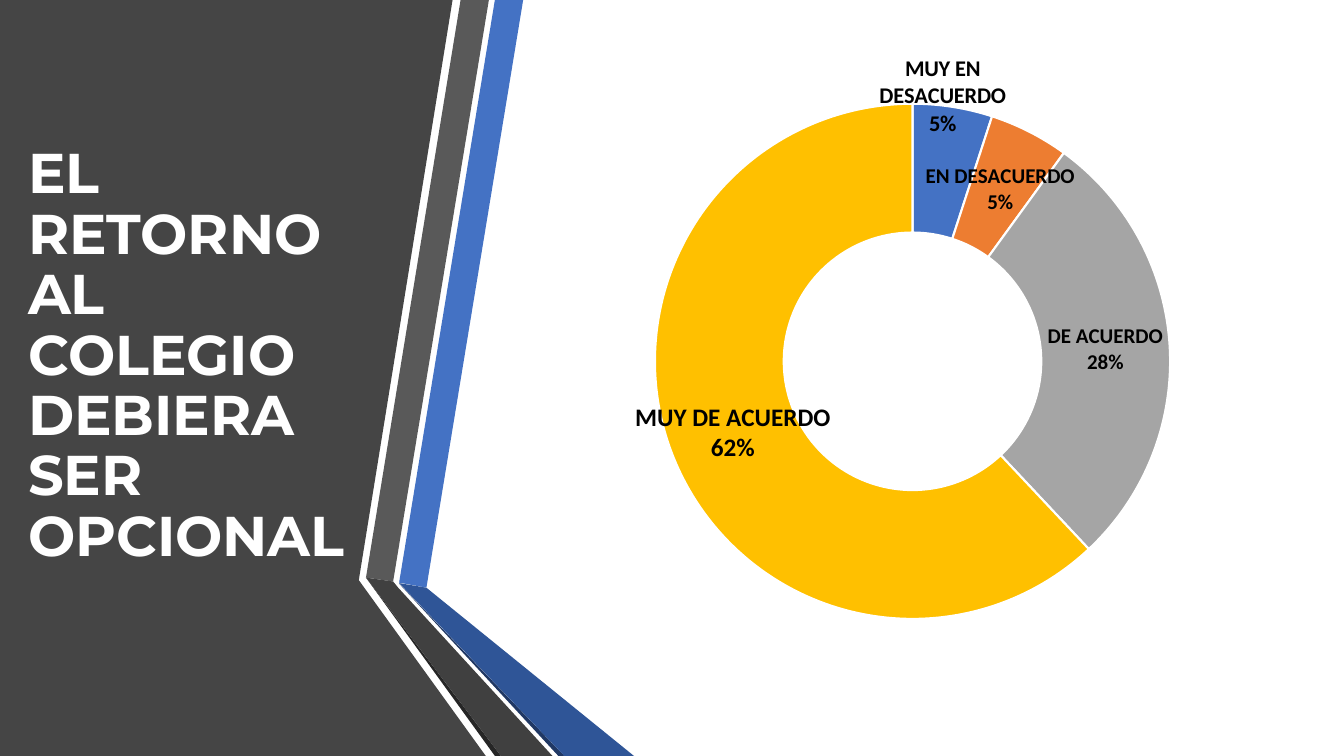
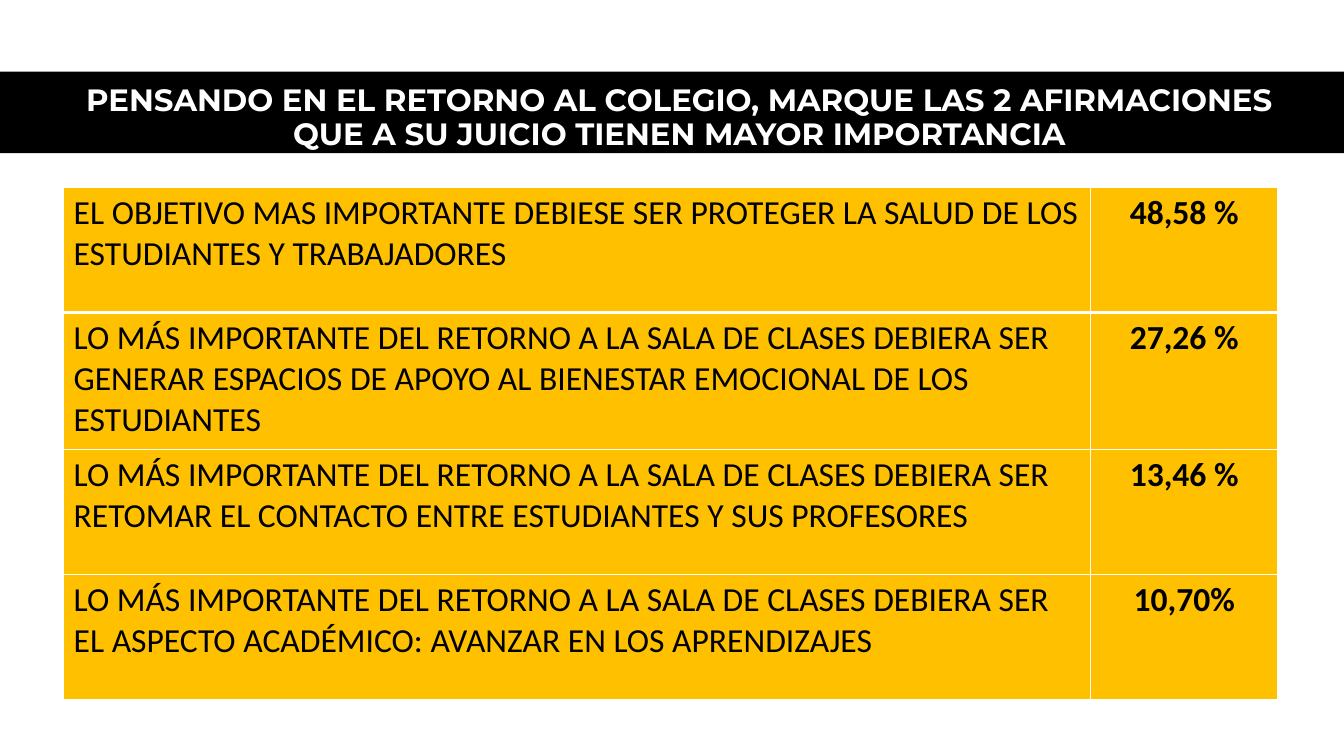
from lxml import etree
from pptx import Presentation
from pptx.chart.data import CategoryChartData
from pptx.dml.color import RGBColor
from pptx.enum import chart as kinds, shapes, text
from pptx.oxml import ns
from pptx.util import Pt

WHITE, BLACK, GOLD, BLUE = "FFFFFF", "000000", "FFC000", "4472C4"
HEAD, BODY = "Montserrat", "Calibri"

BANDS = [
    ("454545", [(0, 0), (323.3, 0), (256.3, 414.4), (347, 540), (0, 540)]),
    (BLUE, [(285.1, 416.2), (304.6, 419.8), (373.7, 0), (353.5, 0)]),
    ("595959", [(349.2, 0), (329, 0), (261.4, 412.6), (280.8, 415.4)]),
    ("262626", [(261.4, 412.6), (353.5, 540), (357.8, 540)]),
    ("203864", [(285.1, 416.9), (398.9, 540), (403.2, 540)]),
    ("2F5597", [(285.1, 416.5), (403.2, 540), (452.9, 540), (304.6, 419.8)]),
    ("404040", [(394.6, 540), (284.4, 419.8), (280.8, 415.4), (261.4, 412.6), (357.8, 540)]),
]
VIEW = "EL RETORNO AL COLEGIO DEBIERA SER OPCIONAL"
VOTES = [
    ("MUY EN DESACUERDO", 5, BLUE, 16),
    ("EN DESACUERDO", 5, "ED7D31", 15),
    ("DE ACUERDO", 28, "A5A5A5", 15),
    ("MUY DE ACUERDO", 62, GOLD, 18),
]
RING = {"x": 0.161, "y": 0.089, "w": 0.687, "h": 0.877}
SHIFT = {"x": 0, "y": -0.126}

ASK = ("PENSANDO EN EL RETORNO AL COLEGIO, MARQUE LAS 2 AFIRMACIONES "
       "QUE A SU JUICIO TIENEN MAYOR IMPORTANCIA")
LEAD = "LO MÁS IMPORTANTE DEL RETORNO A LA SALA DE CLASES DEBIERA SER "
CLAIMS = [
    ("EL OBJETIVO MAS IMPORTANTE DEBIESE SER PROTEGER LA SALUD DE LOS "
     "ESTUDIANTES Y TRABAJADORES", "48,58 %"),
    (LEAD + "GENERAR ESPACIOS DE APOYO AL BIENESTAR EMOCIONAL DE LOS ESTUDIANTES", "27,26 %"),
    (LEAD + "RETOMAR EL CONTACTO ENTRE ESTUDIANTES Y SUS PROFESORES", "13,46 %"),
    (LEAD + "EL ASPECTO ACADÉMICO: AVANZAR EN LOS APRENDIZAJES", "10,70%"),
]
COLS, ROWS = (733.5, 134), (89.3, 97.9, 89.3, 89.3)


def rgb(tone):
    return RGBColor.from_string(tone)


def style(font, size, tone=BLACK, face=BODY, bold=True):
    font.size, font.name, font.bold = Pt(size), face, bold
    font.color.rgb = rgb(tone)


def paint(shape, tone):
    shape.shadow.inherit = False
    shape.fill.solid()
    shape.fill.fore_color.rgb = rgb(tone)
    shape.line.fill.background()


def title(slide, words, box, size, align):
    frame = slide.shapes.add_textbox(*map(Pt, box)).text_frame
    frame.word_wrap = True
    frame.vertical_anchor = text.MSO_ANCHOR.MIDDLE
    frame.text = words
    para = frame.paragraphs[0]
    para.alignment, para.line_spacing = align, 0.9
    style(para.runs[0].font, size, WHITE, HEAD)


def layout(place, inner=False):
    node = etree.Element(ns.qn("c:layout"))
    man = etree.SubElement(node, ns.qn("c:manualLayout"))
    parts = list(place.items())
    if inner:
        parts = [("layoutTarget", "inner"), ("xMode", "edge"), ("yMode", "edge")] + parts
    for tag, val in parts:
        etree.SubElement(man, ns.qn("c:" + tag)).set("val", str(val))
    return node


def donut(slide):
    data = CategoryChartData()
    data.categories = [vote[0] for vote in VOTES]
    data.add_series("Series 1", [vote[1] for vote in VOTES])
    box = map(Pt, (381.6, 36.7, 535.7, 419.8))
    chart = slide.shapes.add_chart(kinds.XL_CHART_TYPE.DOUGHNUT, *box, data).chart
    chart.has_legend = chart.has_title = False
    style(chart.font, 10, bold=False)
    plot = chart.plots[0]
    plot.vary_by_categories = True
    series = plot.series[0]
    style(series.data_labels.font, 15)
    for i, (_, _, tone, size) in enumerate(VOTES):
        point = series.points[i]
        point.format.fill.solid()
        point.format.fill.fore_color.rgb = rgb(tone)
        point.format.line.color.rgb = rgb(WHITE)
        point.format.line.width = Pt(1.5)
        style(point.data_label.font, size)
    root = series.data_labels._element
    for tag, val in (("showVal", 0), ("showCatName", 1), ("showPercent", 1)):
        for node in root.iter(ns.qn("c:" + tag)):
            node.set("val", str(val))
    for node in list(root.iter(ns.qn("c:showBubbleSize"))):
        split = etree.Element(ns.qn("c:separator"))
        split.text = "\n"
        node.addnext(split)
    root.find(ns.qn("c:dLbl")).insert(1, layout(SHIFT))
    area = plot._element.getparent()
    for old in area.findall(ns.qn("c:layout")):
        area.remove(old)
    area.insert(0, layout(RING, True))


def border(cell, widths):
    props = cell._tc.get_or_add_tcPr()
    for i, (side, width) in enumerate(zip("LRTB", widths)):
        line = etree.Element(ns.qn("a:ln" + side), w=str(Pt(width)))
        fill = etree.SubElement(line, ns.qn("a:solidFill"))
        etree.SubElement(fill, ns.qn("a:srgbClr"), val=WHITE)
        props.insert(i, line)


def grid(slide):
    box = map(Pt, (45.4, 133.9, sum(COLS), sum(ROWS)))
    table = slide.shapes.add_table(len(ROWS), len(COLS), *box).table
    table.first_row = table.horz_banding = False
    for col, width in zip(table.columns, COLS):
        col.width = Pt(width)
    for r, (row, tall, claim) in enumerate(zip(table.rows, ROWS, CLAIMS)):
        row.height = Pt(tall)
        for c, (cell, words) in enumerate(zip(row.cells, claim)):
            cell.text = words
            cell.fill.solid()
            cell.fill.fore_color.rgb = rgb(GOLD)
            para = cell.text_frame.paragraphs[0]
            para.alignment = text.PP_ALIGN.CENTER if c else text.PP_ALIGN.LEFT
            style(para.runs[0].font, 24, bold=c == 1)
            border(cell, (1, 1, 3 if r == 1 else 1, 3 if r == 0 else 1))


def main():
    """Build the two survey slides."""
    deck = Presentation()
    deck.slide_width, deck.slide_height = Pt(960), Pt(540)
    first, second = [deck.slides.add_slide(deck.slide_layouts[6]) for _ in range(2)]

    for tone, dots in BANDS:
        start, *rest = [(Pt(x), Pt(y)) for x, y in dots]
        pen = first.shapes.build_freeform(*start)
        pen.add_line_segments(rest, close=True)
        paint(pen.convert_to_shape(), tone)
    title(first, VIEW, (13, 54, 247.7, 401.8), 40, text.PP_ALIGN.LEFT)
    donut(first)

    bar = map(Pt, (0, 51.1, 960, 58.3))
    paint(second.shapes.add_shape(shapes.MSO_SHAPE.RECTANGLE, *bar), BLACK)
    title(second, ASK, (43.9, 51.1, 882.7, 67), 22, text.PP_ALIGN.CENTER)
    grid(second)
    deck.save("out.pptx")


if __name__ == "__main__":
    main()
